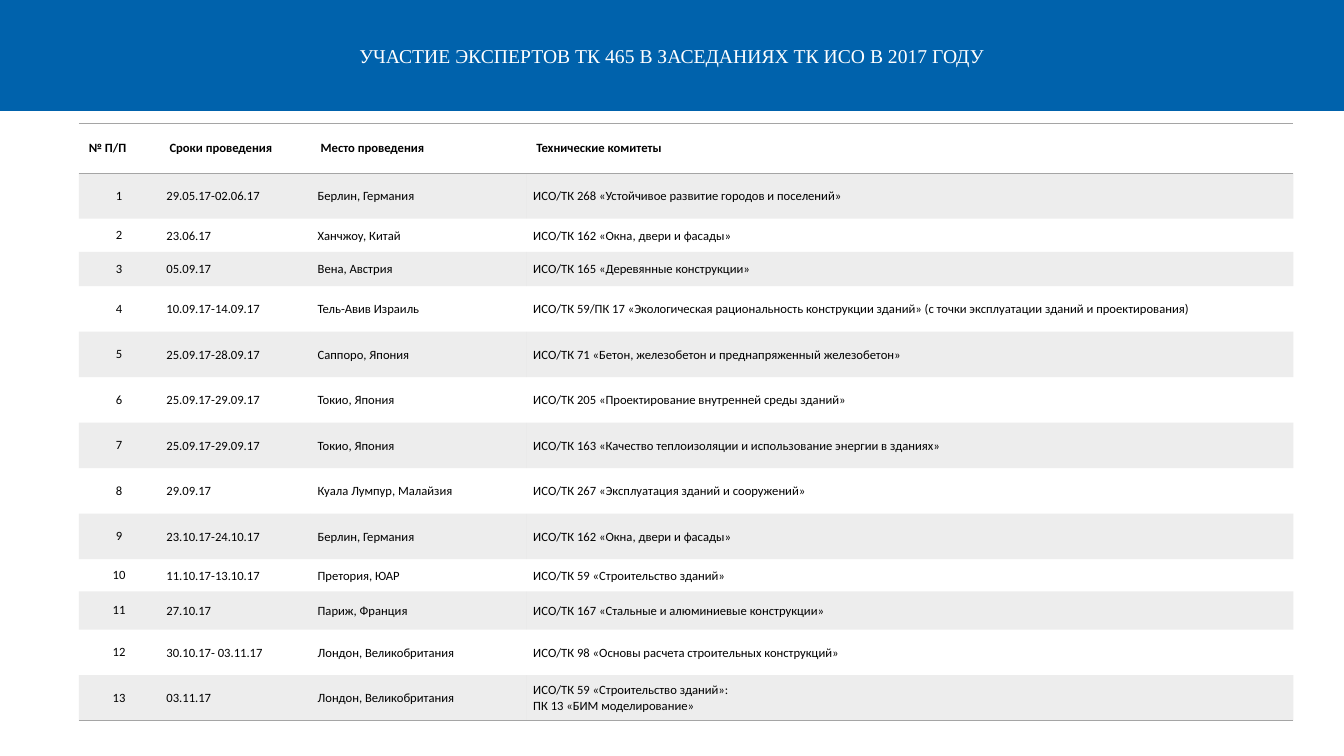
"""Build a slide with a table of expert participation in committee meetings."""
from dataclasses import dataclass

from lxml.etree import SubElement
from pptx import Presentation
from pptx.dml.color import RGBColor
from pptx.enum.text import MSO_ANCHOR, PP_ALIGN
from pptx.oxml import parse_xml
from pptx.oxml.ns import nsdecls, qn
from pptx.util import Pt


@dataclass(frozen=True)
class Theme:
    """Colours, fonts and type sizes of the slide."""
    banner: str = "0062AC"
    light: str = "FFFFFF"
    ink: str = "000000"
    grey: str = "A5A5A5"
    band_alpha: int = 20
    title_font: str = "Times New Roman"
    body_font: str = "Calibri"
    title_size: float = 14
    body_size: float = 9
    rule: float = 1


THEME = Theme()
NO_STYLE = "{2D5ABB26-0587-4C30-8999-92F81FD0307C}"
SLIDE_W, SLIDE_H = 960, 540
BANNER_BOX = (0, 0, SLIDE_W, 79.2)
TABLE_BOX = (56.3, 88.4, 867.6, 426.5)
COL_WIDTHS = (57.6, 108, 154)
ROW_H = 32.5
SPECIAL_ROWS = {0: 35.3, 2: 23.8, 3: 24.5, 10: 23, 11: 27.4}
TITLE = "УЧАСТИЕ ЭКСПЕРТОВ ТК 465 В ЗАСЕДАНИЯХ ТК ИСО В 2017 ГОДУ"
HEADER = ("№ П/П", "Сроки проведения", "Место проведения", "Технические комитеты")
MEETINGS = (
    ("29.05.17-02.06.17", "Берлин, Германия",
     "ИСО/ТК 268 «Устойчивое развитие городов и поселений»"),
    ("23.06.17", "Ханчжоу, Китай", "ИСО/ТК 162 «Окна, двери и фасады»"),
    ("05.09.17", "Вена, Австрия", "ИСО/ТК 165 «Деревянные конструкции»"),
    ("10.09.17-14.09.17", "Тель-Авив Израиль",
     "ИСО/ТК 59/ПК 17 «Экологическая рациональность конструкции зданий» "
     "(с точки эксплуатации зданий и проектирования)"),
    ("25.09.17-28.09.17", "Саппоро, Япония",
     "ИСО/ТК 71 «Бетон, железобетон и преднапряженный железобетон»"),
    ("25.09.17-29.09.17", "Токио, Япония",
     "ИСО/ТК 205 «Проектирование внутренней среды зданий»"),
    ("25.09.17-29.09.17", "Токио, Япония",
     "ИСО/ТК 163 «Качество теплоизоляции и использование энергии в зданиях»"),
    ("29.09.17", "Куала Лумпур, Малайзия",
     "ИСО/ТК 267 «Эксплуатация зданий и сооружений»"),
    ("23.10.17-24.10.17", "Берлин, Германия", "ИСО/ТК 162 «Окна, двери и фасады»"),
    ("11.10.17-13.10.17", "Претория, ЮАР", "ИСО/ТК 59 «Строительство зданий»"),
    ("27.10.17", "Париж, Франция", "ИСО/ТК 167 «Стальные и алюминиевые конструкции»"),
    ("30.10.17- 03.11.17", "Лондон, Великобритания",
     "ИСО/ТК 98 «Основы расчета строительных конструкций»"),
    ("03.11.17", "Лондон, Великобритания",
     "ИСО/ТК 59 «Строительство зданий»:\nПК 13 «БИМ моделирование»"),
)


def write(tf, text, *, size=THEME.body_size, font=THEME.body_font, color=THEME.ink,
          bold=False, align=PP_ALIGN.LEFT, spacing=None):
    """Write each line of text as a formatted paragraph."""
    for i, line in enumerate(text.split("\n")):
        p = tf.add_paragraph() if i else tf.paragraphs[0]
        p.alignment = align
        if spacing:
            p.line_spacing = spacing
        r = p.add_run()
        r.text = line
        r.font.size, r.font.name, r.font.bold = Pt(size), font, bold
        r.font.color.rgb = RGBColor.from_string(color)


def add_banner(s, box):
    """Turn the title placeholder into the banner that fills the box."""
    sp = s.shapes.title
    sp.left, sp.top, sp.width, sp.height = map(Pt, box)
    sp.fill.solid()
    sp.fill.fore_color.rgb = RGBColor.from_string(THEME.banner)
    sp.text_frame.vertical_anchor = MSO_ANCHOR.MIDDLE
    write(sp.text_frame, TITLE, size=THEME.title_size, font=THEME.title_font,
          color=THEME.light, align=PP_ALIGN.CENTER)


def paint_cell(cell, banded, borders):
    """Give a cell its translucent band and its rules."""
    if banded:
        cell.fill.solid()
        cell.fill.fore_color.rgb = RGBColor.from_string(THEME.grey)
    else:
        cell.fill.background()
    tc_pr = cell._tc.get_or_add_tcPr()
    for clr in tc_pr.iter(qn("a:srgbClr")):
        SubElement(clr, qn("a:alpha"), val=str(THEME.band_alpha * 1000))
    for i, side in enumerate(borders):
        tc_pr.insert(i, parse_xml(
            f'<a:{side} {nsdecls("a")} w="{Pt(THEME.rule)}"><a:solidFill>'
            f'<a:srgbClr val="{THEME.grey}"/></a:solidFill></a:{side}>'))


def fill_cell(cell, text, row, col):
    """Place text in a cell and format it by its row and column."""
    cell.vertical_anchor = MSO_ANCHOR.MIDDLE
    if row and col:
        cell.margin_left = cell.margin_right = Pt(5.04)
        cell.margin_top = cell.margin_bottom = 0
    centred = row and not col
    write(cell.text_frame, text, bold=not row,
          align=PP_ALIGN.CENTER if centred else PP_ALIGN.LEFT,
          spacing=1.07 if row and col else None)
    borders = {0: ("lnT", "lnB"), len(MEETINGS): ("lnB",)}.get(row, ())
    paint_cell(cell, row % 2 == 1, borders)


def add_meetings(s, box):
    """Add the table of meetings within the box."""
    rows = [HEADER] + [(str(n), *m) for n, m in enumerate(MEETINGS, 1)]
    tbl = s.shapes.add_table(len(rows), len(HEADER), *map(Pt, box)).table
    tbl.first_row = tbl.horz_banding = False
    tbl._tbl.tblPr.find(qn("a:tableStyleId")).text = NO_STYLE
    widths = (*COL_WIDTHS, box[2] - sum(COL_WIDTHS))
    for column, width in zip(tbl.columns, widths):
        column.width = Pt(width)
    for i, row in enumerate(rows):
        tbl.rows[i].height = Pt(SPECIAL_ROWS.get(i, ROW_H))
        for j, text in enumerate(row):
            fill_cell(tbl.cell(i, j), text, i, j)


def main():
    """Build and save the presentation."""
    prs = Presentation()
    prs.slide_width, prs.slide_height = Pt(SLIDE_W), Pt(SLIDE_H)
    s = prs.slides.add_slide(prs.slide_layouts[5])
    add_banner(s, BANNER_BOX)
    add_meetings(s, TABLE_BOX)
    prs.save("out.pptx")


if __name__ == "__main__":
    main()
